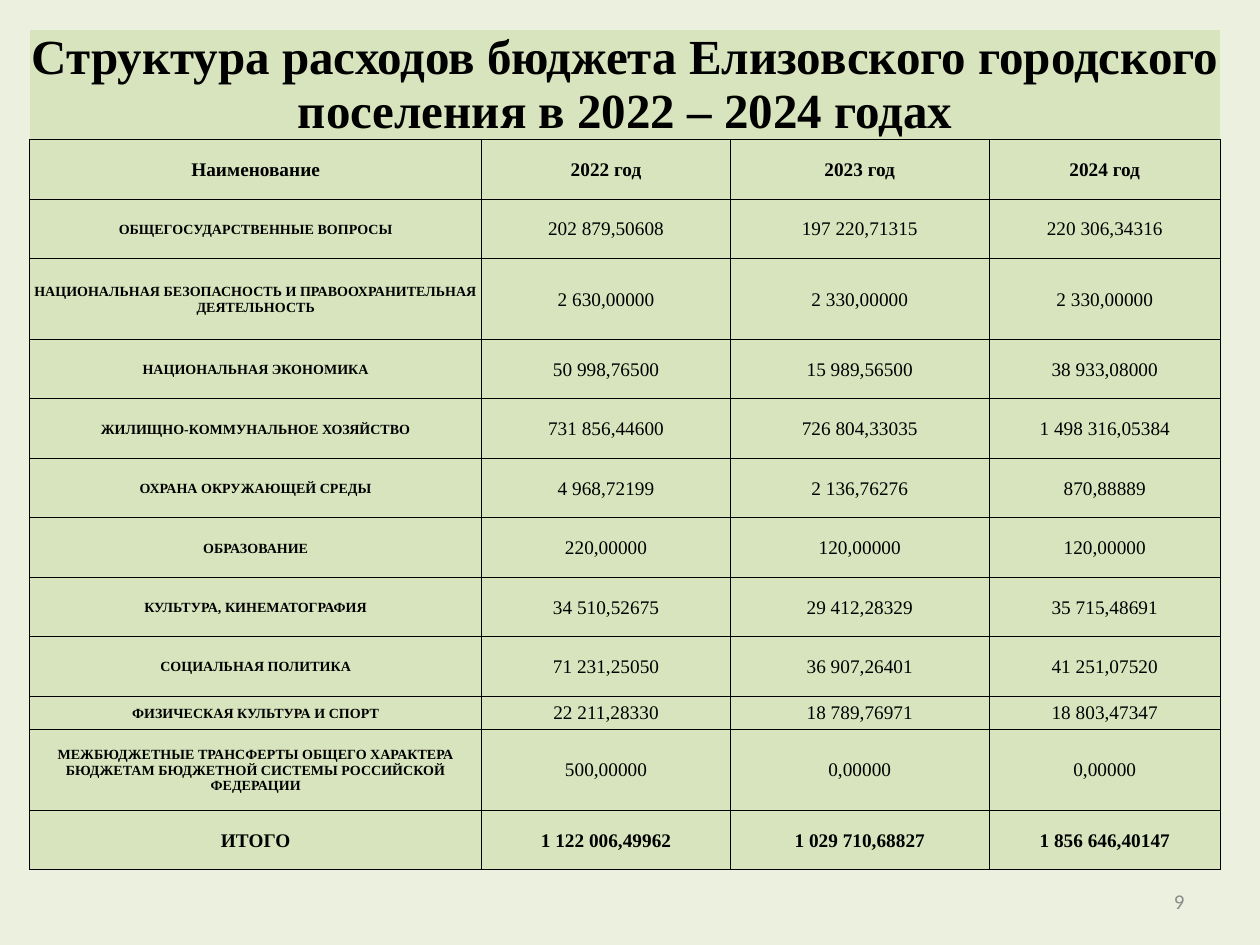
from lxml import etree
from pptx import Presentation
from pptx.dml.color import RGBColor
from pptx.enum.text import MSO_ANCHOR, PP_ALIGN
from pptx.oxml.ns import qn
from pptx.util import Pt

CENTER, RIGHT = PP_ALIGN.CENTER, PP_ALIGN.RIGHT
TOP, MIDDLE = MSO_ANCHOR.TOP, MSO_ANCHOR.MIDDLE

# Content
TITLE = "Структура расходов бюджета Елизовского городского поселения в 2022 – 2024 годах"
HEADER = ("Наименование", "2022 год", "2023 год", "2024 год")
EXPENSES = [
    ("ОБЩЕГОСУДАРСТВЕННЫЕ ВОПРОСЫ", "202 879,50608", "197 220,71315", "220 306,34316"),
    ("НАЦИОНАЛЬНАЯ БЕЗОПАСНОСТЬ И ПРАВООХРАНИТЕЛЬНАЯ ДЕЯТЕЛЬНОСТЬ",
     "2 630,00000", "2 330,00000", "2 330,00000"),
    ("НАЦИОНАЛЬНАЯ ЭКОНОМИКА", "50 998,76500", "15 989,56500", "38 933,08000"),
    ("ЖИЛИЩНО-КОММУНАЛЬНОЕ ХОЗЯЙСТВО", "731 856,44600", "726 804,33035", "1 498 316,05384"),
    ("ОХРАНА ОКРУЖАЮЩЕЙ СРЕДЫ", "4 968,72199", "2 136,76276", "870,88889"),
    ("ОБРАЗОВАНИЕ", "220,00000", "120,00000", "120,00000"),
    ("КУЛЬТУРА, КИНЕМАТОГРАФИЯ", "34 510,52675", "29 412,28329", "35 715,48691"),
    ("СОЦИАЛЬНАЯ ПОЛИТИКА", "71 231,25050", "36 907,26401", "41 251,07520"),
    ("ФИЗИЧЕСКАЯ КУЛЬТУРА И СПОРТ", "22 211,28330", "18 789,76971", "18 803,47347"),
    ("МЕЖБЮДЖЕТНЫЕ ТРАНСФЕРТЫ ОБЩЕГО ХАРАКТЕРА БЮДЖЕТАМ БЮДЖЕТНОЙ СИСТЕМЫ РОССИЙСКОЙ ФЕДЕРАЦИИ",
     "500,00000", "0,00000", "0,00000"),
]
TOTAL = ("ИТОГО", "1 122 006,49962", "1 029 710,68827", "1 856 646,40147")
ROWS = [(TITLE, "", "", ""), HEADER, *EXPENSES, TOTAL]

# Layout in points
LEFT, TABLE_TOP = 17, 17
COL_WIDTHS = (258.3, 142, 148, 132)
ROW_HEIGHT = 34
SPECIAL_HEIGHTS = {0: 50.4, 3: 46.3, 10: 18.9, 11: 46.3}
MARGINS = {"margin_left": Pt(0.7), "margin_top": Pt(0.7),
           "margin_right": Pt(0.7), "margin_bottom": Pt(0)}

# Text formats
TITLE_FONT = {"name": "Times New Roman", "size": Pt(28), "bold": True}
HEAD_FONT = {**TITLE_FONT, "size": Pt(11)}
LABEL_FONT = {**TITLE_FONT, "size": Pt(8)}
VALUE_FONT = {**HEAD_FONT, "bold": False}
PAGE_FONT = {"name": "Calibri", "size": Pt(12)}


def set_attrs(obj, values):
    for name, value in values.items():
        setattr(obj, name, value)


def set_fill(fill, color):
    fill.solid()
    fill.fore_color.rgb = RGBColor.from_string(color)


def write(tf, text, font, color, align):
    p = tf.paragraphs[0]
    p.alignment = align
    r = p.add_run()
    r.text = text
    set_attrs(r.font, font)
    set_fill(r.font.fill, color)


def set_borders(cell, visible):
    tc_pr = cell._tc.get_or_add_tcPr()
    for side in "LRTB":
        ln = etree.SubElement(tc_pr, qn("a:ln" + side), w=str(Pt(0.5)))
        if side in visible:
            fill = etree.SubElement(ln, qn("a:solidFill"))
            etree.SubElement(fill, qn("a:srgbClr"), val="000000")
        else:
            etree.SubElement(ln, qn("a:noFill"))


def cell_font(row, col):
    if row == 0:
        return TITLE_FONT
    if row in (1, len(ROWS) - 1):
        return HEAD_FONT
    return LABEL_FONT if col == 0 else VALUE_FONT


prs = Presentation()
prs.slide_width, prs.slide_height = Pt(720), Pt(540)
s = prs.slides.add_slide(prs.slide_layouts[6])
set_fill(s.background.fill, "EBF1DE")

# Budget table, with the title in its merged first row
heights = [SPECIAL_HEIGHTS.get(i, ROW_HEIGHT) for i in range(len(ROWS))]
table = s.shapes.add_table(len(ROWS), len(COL_WIDTHS), Pt(LEFT), Pt(TABLE_TOP),
                           Pt(sum(COL_WIDTHS)), Pt(sum(heights))).table
table.first_row = table.horz_banding = False
for column, width in zip(table.columns, COL_WIDTHS):
    column.width = Pt(width)
for row, height in zip(table.rows, heights):
    row.height = Pt(height)
table.cell(0, 0).merge(table.cell(0, len(COL_WIDTHS) - 1))

for i, texts in enumerate(ROWS):
    for j, text in enumerate(texts):
        cell = table.cell(i, j)
        set_attrs(cell, MARGINS)
        cell.vertical_anchor = MIDDLE if i else TOP
        set_borders(cell, "LRTB" if i else "B")
        set_fill(cell.fill, "D7E4BD")
        if text:
            write(cell.text_frame, text, cell_font(i, j), "000000", CENTER)

# Page number
tf = s.shapes.add_textbox(Pt(516), Pt(500.5), Pt(168), Pt(28.8)).text_frame
set_attrs(tf, {"word_wrap": True, "vertical_anchor": MIDDLE})
write(tf, "9", PAGE_FONT, "8C8C8C", RIGHT)

prs.save("out.pptx")
